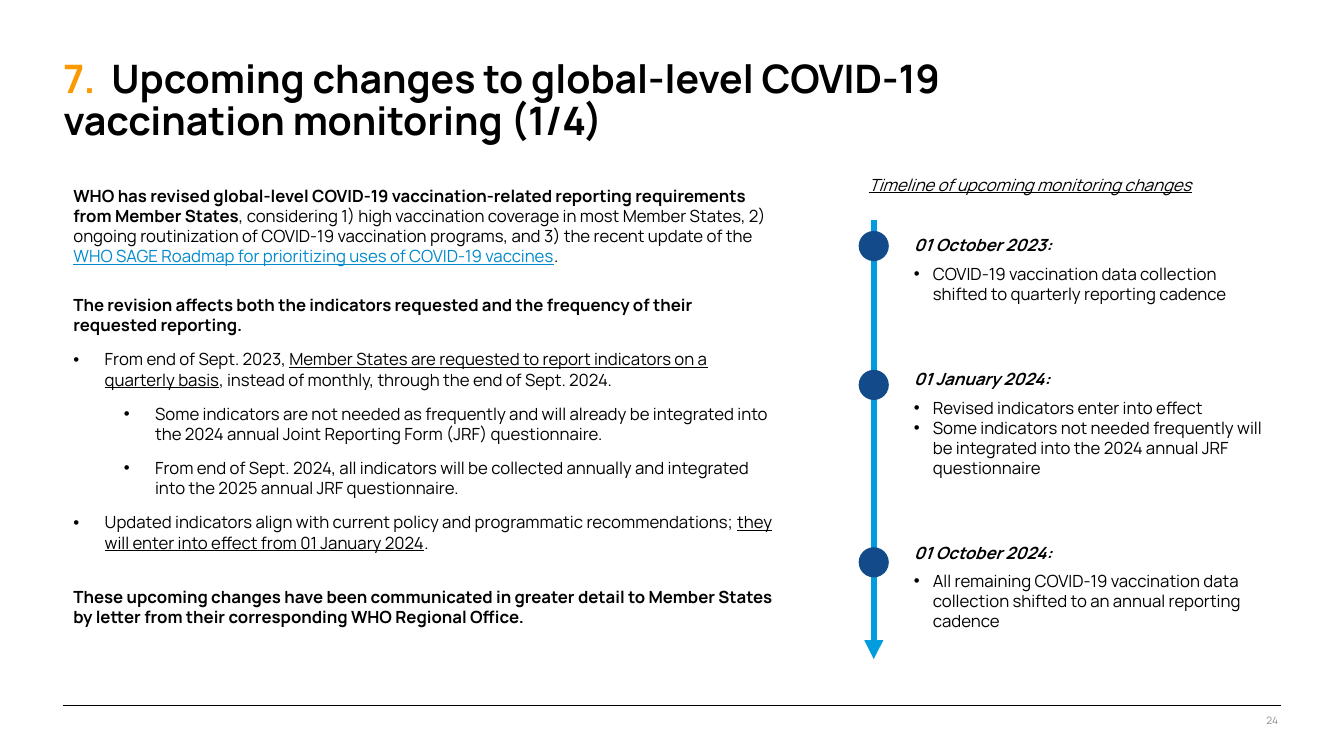
import pptx
import pptx.dml.color
import pptx.enum.shapes
import pptx.enum.text
import pptx.oxml.ns
import pptx.util
from lxml import etree
from pptx.util import Cm

FONT = "Manrope"
COLORS = {
    "text": "000000",
    "number": "FA9A00",
    "link": "008ACD",
    "page": "8C8C8C",
    "arrow": "009CDE",
    "dot": "134A8A",
}
AXIS_X = 22.02
DOT_SIZE = 0.76

BODY = [
    (0, 0, [
        ("WHO has revised global-level COVID-19 vaccination-related reporting requirements from Member States", "b"),
        (", considering 1) high vaccination coverage in most Member States, 2) ongoing routinization of "
         "COVID-19 vaccination programs, and 3) the recent update of the ", ""),
        ("WHO SAGE Roadmap for prioritizing uses of COVID-19 vaccines", "u", "link"),
        (".", ""),
    ]),
    (0, 20.5, [
        ("The revision affects both the indicators requested and the frequency of their requested reporting.", "b"),
    ]),
    (0.79, 10, [
        ("From end of Sept. 2023, ", ""),
        ("Member States are requested to report indicators on a quarterly basis", "u"),
        (", instead of monthly, through the end of Sept. 2024.", ""),
    ]),
    (2.06, 10, [
        ("Some indicators are not needed as frequently and will already be integrated into the 2024 annual "
         "Joint Reporting Form (JRF) questionnaire.", ""),
    ]),
    (2.06, 10, [
        ("From end of Sept. 2024, all indicators will be collected annually and integrated into the 2025 "
         "annual JRF questionnaire.", ""),
    ]),
    (0.79, 10, [
        ("Updated indicators align with current policy and programmatic recommendations; ", ""),
        ("they will enter into effect from 01 January 2024", "u"),
        (".", ""),
    ]),
    (0, 24.5, [
        ("These upcoming changes have been communicated in greater detail to Member States by letter from "
         "their corresponding WHO Regional Office.", "b"),
    ]),
]

MILESTONES = [
    (5.82, 5.79, 2.01, "01 October 2023:", [
        "COVID-19 vaccination data collection shifted to quarterly reporting cadence",
    ]),
    (9.32, 9.17, 3.02, "01 January 2024:", [
        "Revised indicators enter into effect",
        "Some indicators not needed frequently will be integrated into the 2024 annual JRF questionnaire",
    ]),
    (13.79, 13.54, 2.51, "01 October 2024:", [
        "All remaining COVID-19 vaccination data collection shifted to an annual reporting cadence",
    ]),
]


def rgb(name):
    return pptx.dml.color.RGBColor.from_string(COLORS[name])


def add_element(parent, tag, **attributes):
    element = etree.SubElement(parent, pptx.oxml.ns.qn(tag))
    for key, value in attributes.items():
        element.set(key, str(value))
    return element


def add_box(page, left, top, width, height, inset=True):
    box = page.shapes.add_textbox(Cm(left), Cm(top), Cm(width), Cm(height))
    frame = box.text_frame
    frame.word_wrap = True
    if not inset:
        frame.margin_left = frame.margin_right = frame.margin_top = frame.margin_bottom = 0
    return frame


def add_para(frame, spans, size=12, before=0, after=0):
    first = frame.paragraphs[0]
    para = frame.add_paragraph() if first.runs else first
    para.space_before = pptx.util.Pt(before)
    para.space_after = pptx.util.Pt(after)
    for text, style, *color in spans:
        span = para.add_run()
        span.text = text
        span.font.name = FONT
        span.font.size = pptx.util.Pt(size)
        span.font.bold = "b" in style
        span.font.italic = "i" in style
        span.font.underline = "u" in style
        span.font.color.rgb = rgb(color[0] if color else "text")
    return para


def add_bullet(para, indent, hanging):
    properties = para._p.get_or_add_pPr()
    properties.set("marL", str(Cm(indent)))
    properties.set("indent", str(-Cm(hanging)))
    add_element(properties, "a:buFont", typeface="Arial")
    add_element(properties, "a:buChar", char="•")


def add_line(page, start, end, color, width, arrow=False):
    line = page.shapes.add_connector(
        pptx.enum.shapes.MSO_CONNECTOR.STRAIGHT, *(Cm(value) for value in start + end))
    line.line.color.rgb = rgb(color)
    line.line.width = pptx.util.Pt(width)
    if arrow:
        add_element(line.line._get_or_add_ln(), "a:tailEnd", type="triangle")
    add_element(line._element.spPr, "a:effectLst")


def add_dot(page, top):
    dot = page.shapes.add_shape(
        pptx.enum.shapes.MSO_SHAPE.OVAL,
        Cm(AXIS_X - DOT_SIZE / 2), Cm(top), Cm(DOT_SIZE), Cm(DOT_SIZE))
    dot.shadow.inherit = False
    dot.fill.solid()
    dot.fill.fore_color.rgb = rgb("dot")
    dot.line.fill.background()


def add_title(page):
    frame = add_box(page, 1.6, 1.5, 25.65, 2.26, inset=False)
    para = add_para(frame, [
        ("7.\t", "b", "number"),
        ("Upcoming changes to global-level COVID-19 vaccination monitoring (1/4)", "b"),
    ], size=28)
    para.line_spacing = 0.9
    stops = add_element(para._p.get_or_add_pPr(), "a:tabLst")
    add_element(stops, "a:tab", pos=Cm(1.21), algn="l")


def add_footer(page):
    add_line(page, (1.6, 17.78), (32.28, 17.78), "text", 0.75)
    frame = add_box(page, 29.72, 18.01, 2.49, 0.3, inset=False)
    para = add_para(frame, [("24", "", "page")], size=7.3)
    para.alignment = pptx.enum.text.PP_ALIGN.RIGHT


def add_body(page):
    frame = add_box(page, 1.6, 4.55, 18.16, 11.99)
    for indent, before, spans in BODY:
        para = add_para(frame, spans, before=before)
        if indent:
            add_bullet(para, indent, 0.79)


def add_timeline(page):
    add_line(page, (AXIS_X, 5.54), (AXIS_X, 16.61), "arrow", 4.5, arrow=True)
    heading = add_box(page, 21.64, 4.27, 10.67, 0.76)
    add_para(heading, [("Timeline of upcoming monitoring changes", "iu")])
    for dot_top, text_top, height, date, changes in MILESTONES:
        add_dot(page, dot_top)
        frame = add_box(page, 22.78, text_top, 9.42, height)
        add_para(frame, [(date, "bi")], after=6)
        for change in changes:
            add_bullet(add_para(frame, [(change, "")]), 0.48, 0.48)


def main():
    deck = pptx.Presentation()
    deck.slide_width = Cm(33.87)
    deck.slide_height = Cm(19.05)
    page = deck.slides.add_slide(deck.slide_layouts[6])
    add_footer(page)
    add_title(page)
    add_body(page)
    add_timeline(page)
    deck.save("out.pptx")


if __name__ == "__main__":
    main()
